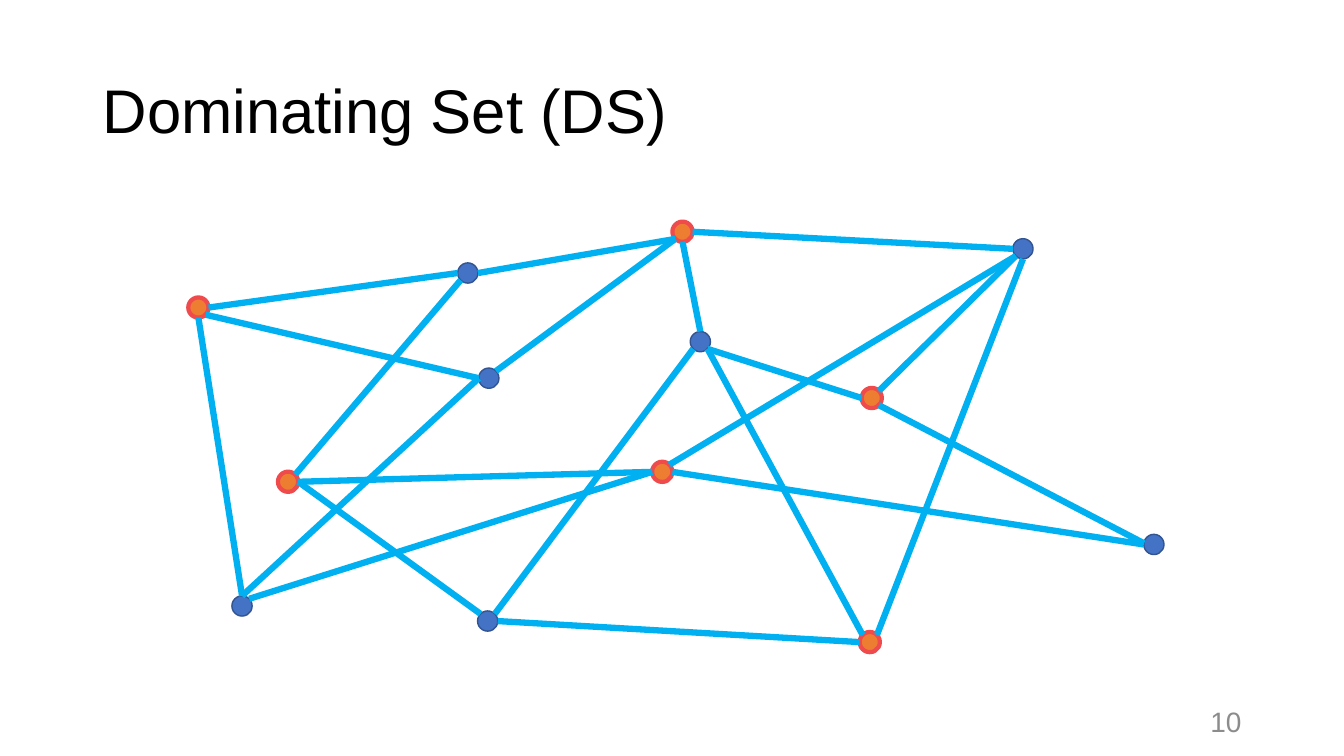
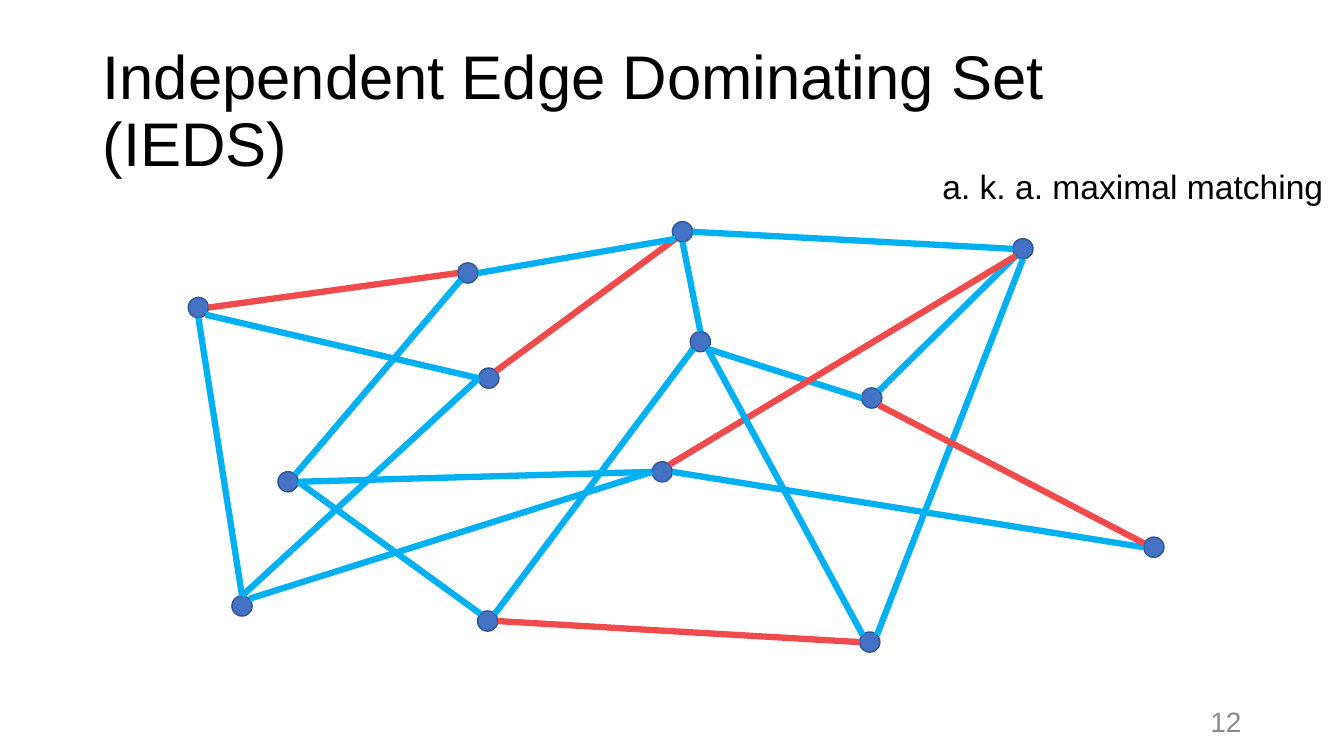
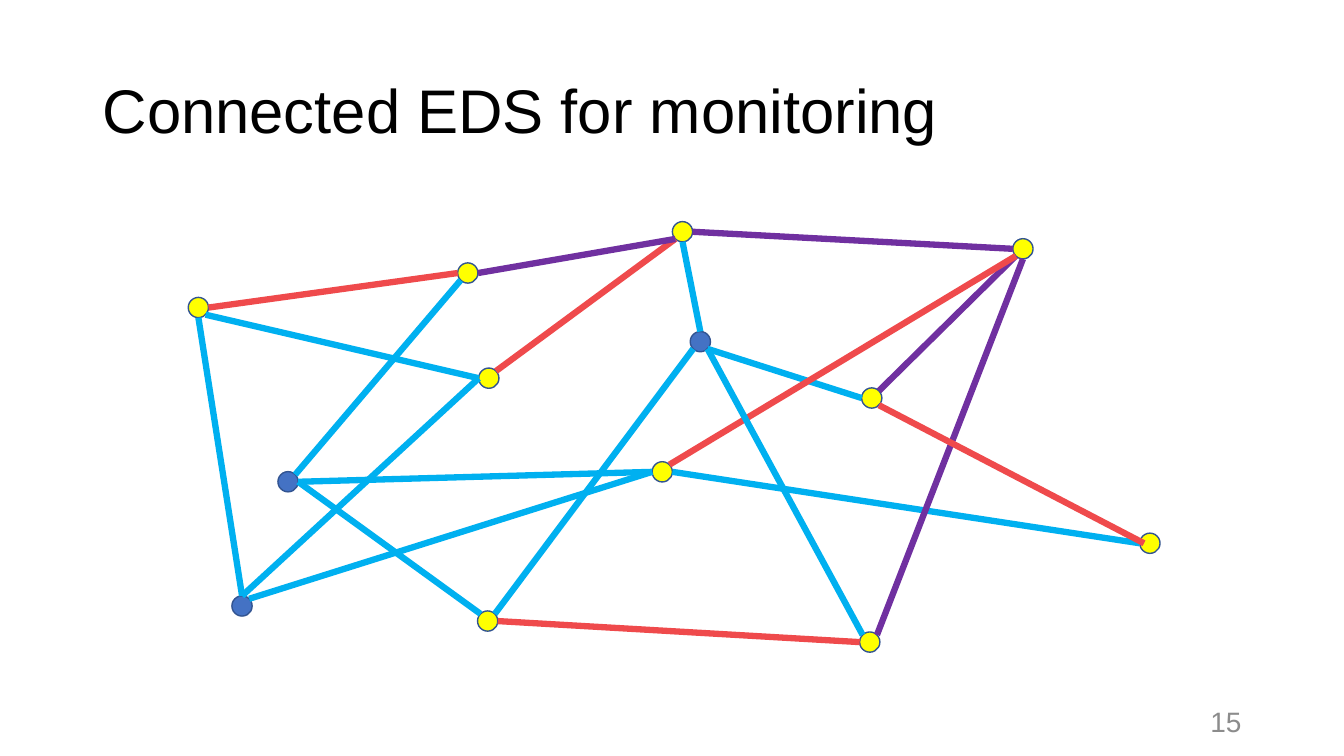
from lxml.etree import SubElement
from pptx import Presentation
from pptx.dml.color import RGBColor as Rgb
from pptx.enum.shapes import MSO_CONNECTOR as Con, MSO_SHAPE as Shp
from pptx.enum.text import MSO_ANCHOR as Anc, MSO_AUTO_SIZE as Fit, PP_ALIGN as Al
from pptx.oxml.ns import qn
from pptx.util import Cm, Pt

BLACK = Rgb(0x00, 0x00, 0x00)
GREY = Rgb(0x8C, 0x8C, 0x8C)
BLUE = Rgb(0x44, 0x72, 0xC4)
NAVY = Rgb(0x32, 0x54, 0x91)
ORANGE = Rgb(0xED, 0x7D, 0x31)
YELLOW = Rgb(0xFF, 0xFF, 0x00)
RED = Rgb(0xEF, 0x4A, 0x4C)
CYAN = Rgb(0x00, 0xB0, 0xF0)
PURPLE = Rgb(0x70, 0x30, 0xA0)

# Node centres in cm
NODES = {
    "A": (5, 7.75), "B": (11.79, 6.88), "C": (7.26, 12.14),
    "D": (12.32, 9.53), "E": (6.1, 15.27), "F": (17.65, 8.61),
    "G": (12.29, 15.65), "H": (16.69, 11.89), "I": (17.2, 5.84),
    "J": (21.97, 10.03), "K": (25.78, 6.27), "L": (29.08, 13.72),
    "M": (21.92, 16.18),
}
SIZE = 0.51

# Edges: node and compass side at both ends; JL ends at a fixed spot
EDGES = [
    "A e B w", "C ne B sw", "D ne I sw", "I e K w", "H e L w", "M ne K s",
    "B e I sw", "C e H w", "C e G nw", "E n D w", "E ne H w", "G ne F sw",
    "F n I s", "F se J w", "J ne K sw", "A s E n", "J se L fix", "G e M w",
    "A se D w", "H ne K sw", "M nw F se",
]
FIXED = (28.83, 13.69)

# Looks of nodes: fill, outline, outline width
PLAIN = (BLUE, NAVY, 1)
CHOSEN = (ORANGE, RED, 3)
COVERED = (YELLOW, NAVY, 1)

MATCH = ["AB", "DI", "JL", "GM", "HK"]
LINKS = ["IK", "MK", "BI", "JK"]
SLIDES = [
    {"title": "Dominating Set (DS)", "page": "10",
     "marked": "ACHIJM", "look": CHOSEN},
    {"title": "Independent Edge Dominating Set (IEDS)", "page": "12",
     "red": MATCH, "moved": {"L": (29.08, 13.79)},
     "note": "a. k. a. maximal matching"},
    {"title": "Connected EDS for monitoring", "page": "15",
     "marked": "ABDGHIJKLM", "look": COVERED, "red": MATCH,
     "purple": LINKS, "moved": {"L": (28.98, 13.69)}},
]

# Text styles
HEAD = {"size": Pt(44), "name": "Arial", "color": BLACK}
NOTE = {"size": Pt(24), "name": "Arial", "color": BLACK}
PAGE = {"size": Pt(20), "name": "Arial", "color": GREY}


def write(shape, text, style, anchor=Anc.TOP, align=Al.LEFT, space=1.0):
    frame = shape.text_frame
    frame.text = text
    frame.word_wrap = True
    frame.auto_size = Fit.NONE
    frame.vertical_anchor = anchor
    para = frame.paragraphs[0]
    para.alignment = align
    para.line_spacing = space
    font = para.runs[0].font
    for key, val in style.items():
        if key == "color":
            font.color.rgb = val
        else:
            setattr(font, key, val)


def place(shape, left, top, width, height):
    box = {"left": left, "top": top, "width": width, "height": height}
    for key, val in box.items():
        setattr(shape, key, Cm(val))


def add_node(slide, spot, look):
    x, y = spot
    fill, edge, width = look
    dot = slide.shapes.add_shape(
        Shp.OVAL, Cm(x - SIZE / 2), Cm(y - SIZE / 2), Cm(SIZE), Cm(SIZE))
    dot.shadow.inherit = False
    dot.fill.solid()
    dot.fill.fore_color.rgb = fill
    dot.line.color.rgb = edge
    dot.line.width = Pt(width)


def rim(spot, side):
    """Point on a node's rim in a compass direction."""
    if side == "fix":
        return FIXED
    dx = ("e" in side) - ("w" in side)
    dy = ("s" in side) - ("n" in side)
    reach = SIZE / 2 / (dx * dx + dy * dy) ** 0.5
    return spot[0] + dx * reach, spot[1] + dy * reach


def add_edge(slide, start, end, color):
    ends = [Cm(v) for v in (*start, *end)]
    line = slide.shapes.add_connector(Con.STRAIGHT, *ends)
    line.line.color.rgb = color
    line.line.width = Pt(4.5)
    SubElement(line._element.spPr, qn("a:effectLst"))


def add_graph(slide, data):
    spots = {**NODES, **data.get("moved", {})}
    for name, spot in spots.items():
        marked = name in data.get("marked", "")
        add_node(slide, spot, data["look"] if marked else PLAIN)
    tints = {pair: RED for pair in data.get("red", [])}
    tints.update({pair: PURPLE for pair in data.get("purple", [])})
    for edge in EDGES:
        one, out, two, into = edge.split()
        add_edge(slide, rim(spots[one], out), rim(spots[two], into),
                 tints.get(one + two, CYAN))


def add_text(slide, box, *args):
    shape = slide.shapes.add_textbox(0, 0, 0, 0)
    place(shape, *box)
    write(shape, *args)


def main():
    prs = Presentation()
    prs.slide_width, prs.slide_height = Cm(33.87), Cm(19.05)
    for data in SLIDES:
        slide = prs.slides.add_slide(prs.slide_layouts[5])
        title = slide.shapes.title
        place(title, 2.33, 1.01, 29.21, 3.68)
        write(title, data["title"], HEAD, Anc.MIDDLE, Al.LEFT, 0.9)
        add_graph(slide, data)
        if "note" in data:
            add_text(slide, (23.5, 4.06, 10.37, 1.27), data["note"], NOTE)
        add_text(slide, (23.92, 17.66, 7.62, 1.01), data["page"], PAGE,
                 Anc.MIDDLE, Al.RIGHT)
    prs.save("out.pptx")


if __name__ == "__main__":
    main()
